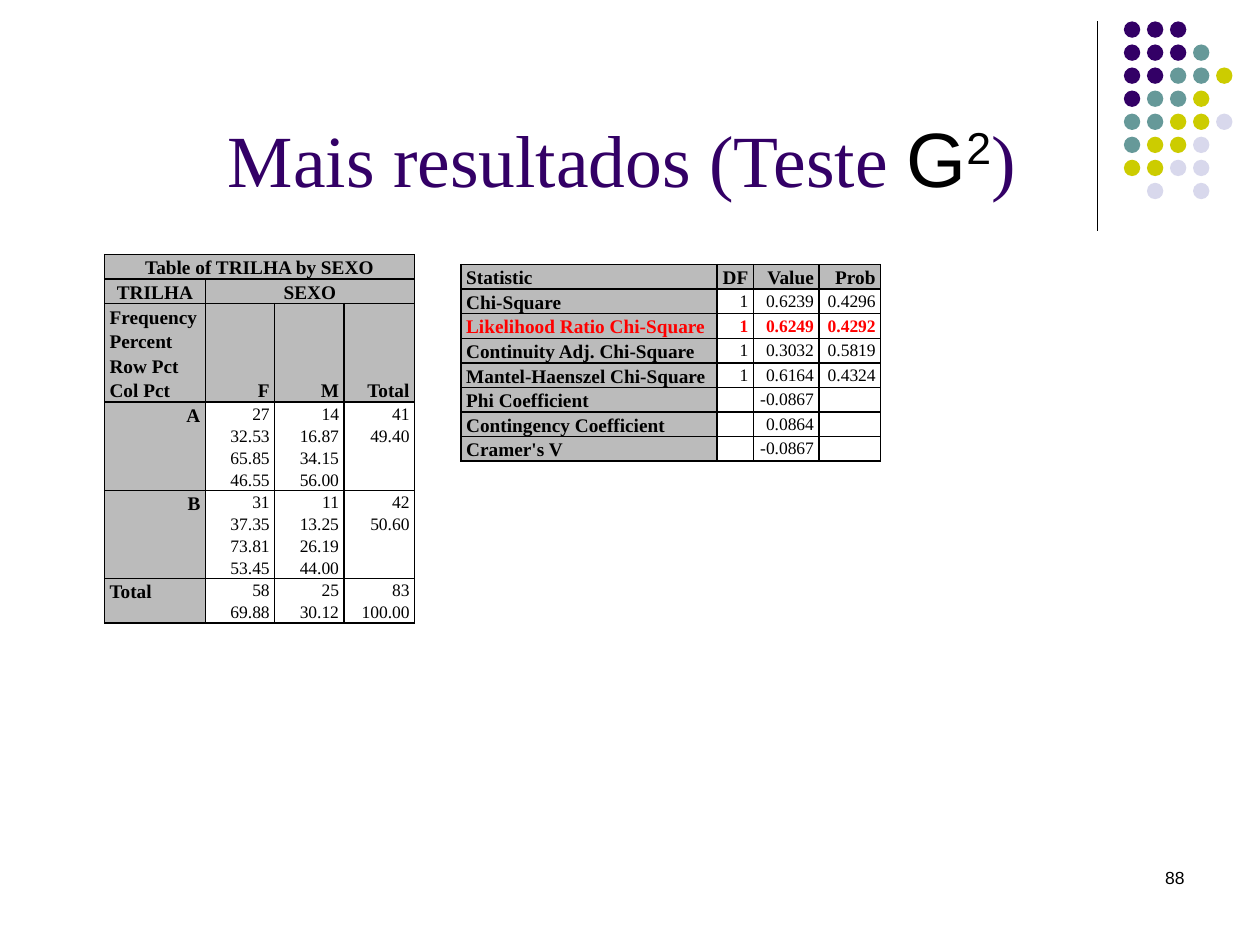
from lxml import etree
from pptx import Presentation
from pptx import util as u
from pptx.dml import color
from pptx.enum import shapes, text
from pptx.oxml import ns

COLORS = {"purple": "330066", "teal": "669999", "olive": "CCCC00", "lilac": "D8D8EC",
          "black": "000000", "white": "FFFFFF", "gray": "BBBBBB", "red": "FF0000"}
SERIF, SANS = "Times New Roman", "Arial"
ALIGN = {"l": text.PP_ALIGN.LEFT, "c": text.PP_ALIGN.CENTER, "r": text.PP_ALIGN.RIGHT}
LINE_PITCH = {11: 14, 10: 12.6}
HEADER_ROW = 0.195

DOT_COLORS = {"p": "purple", "t": "teal", "o": "olive", "l": "lilac"}
DOT_ROWS = ["ppp..", "pppt.", "pptto", "ptto.", "ttool", "tool.", "ooll.", ".l.l."]
DOT_PITCH = 0.183

# Each cell is (text, look, alignment); lines of a cell are split by "\n".
CROSS_TABLE = [
    [("Table of TRILHA by SEXO", "head", "c")],
    [("TRILHA", "head", "c"), ("SEXO", "head", "c")],
    [("Frequency\nPercent\nRow Pct\nCol Pct", "head", "l"),
     ("F", "head", "r"), ("M", "head", "r"), ("Total", "head", "r")],
    [("A", "label", "r"), ("27\n32.53\n65.85\n46.55", "data", "r"),
     ("14\n16.87\n34.15\n56.00", "data", "r"), ("41\n49.40", "data", "r")],
    [("B", "label", "r"), ("31\n37.35\n73.81\n53.45", "data", "r"),
     ("11\n13.25\n26.19\n44.00", "data", "r"), ("42\n50.60", "data", "r")],
    [("Total", "label", "l"), ("58\n69.88", "data", "r"),
     ("25\n30.12", "data", "r"), ("83\n100.00", "data", "r")],
]
STATISTICS = [
    ("Chi-Square", "1", "0.6239", "0.4296"),
    ("Likelihood Ratio Chi-Square", "1", "0.6249", "0.4292"),
    ("Continuity Adj. Chi-Square", "1", "0.3032", "0.5819"),
    ("Mantel-Haenszel Chi-Square", "1", "0.6164", "0.4324"),
    ("Phi Coefficient", "", "-0.0867", ""),
    ("Contingency Coefficient", "", "0.0864", ""),
    ("Cramer's V", "", "-0.0867", ""),
]


def rgb(name):
    return color.RGBColor.from_string(COLORS[name])


class SlideBuilder:
    def __init__(self, slide):
        self.slide = slide

    def line(self, x1, y1, x2, y2):
        rule = self.slide.shapes.add_connector(
            shapes.MSO_CONNECTOR.STRAIGHT, *map(u.Inches, (x1, y1, x2, y2)))
        rule.line.color.rgb = rgb("black")
        rule.line.width = u.Pt(0.75)
        etree.SubElement(rule._element.spPr, ns.qn("a:effectLst"))

    def dot(self, left, top, fill):
        dot = self.slide.shapes.add_shape(
            shapes.MSO_SHAPE.OVAL, *map(u.Inches, (left, top, 0.13, 0.13)))
        dot.shadow.inherit = False
        dot.fill.solid()
        dot.fill.fore_color.rgb = rgb(fill)
        dot.line.fill.background()

    def span(self, para, words, size, font, ink="black", bold=False, raised=False):
        span = para.add_run()
        span.text = words
        span.font.size = u.Pt(size)
        span.font.name = font
        span.font.bold = bold
        span.font.color.rgb = rgb(ink)
        if raised:
            span._r.get_or_add_rPr().set("baseline", "30000")

    def text(self, at, align, anchor, spans):
        box = self.slide.shapes.add_textbox(*map(u.Inches, at))
        box.text_frame.word_wrap = True
        box.text_frame.vertical_anchor = anchor
        para = box.text_frame.paragraphs[0]
        para.alignment = ALIGN[align]
        for span in spans:
            self.span(para, *span)

    def borders(self, cell):
        props = cell._tc.get_or_add_tcPr()
        for place, side in enumerate(("lnL", "lnR", "lnT", "lnB")):
            edge = etree.Element(ns.qn("a:" + side), w=str(u.Pt(1)))
            fill = etree.SubElement(edge, ns.qn("a:solidFill"))
            etree.SubElement(fill, ns.qn("a:srgbClr"), val=COLORS["black"])
            props.insert(place, edge)

    def cell(self, cell, words="", look="head", align="l", ink="black", bold=None):
        data = look == "data"
        size = 10 if data else 11
        cell.margin_left = cell.margin_right = u.Inches(0.04)
        cell.margin_top = cell.margin_bottom = 0
        cell.vertical_anchor = text.MSO_ANCHOR.BOTTOM if look == "head" else text.MSO_ANCHOR.TOP
        cell.fill.solid()
        cell.fill.fore_color.rgb = rgb("white" if data else "gray")
        self.borders(cell)
        para = cell.text_frame.paragraphs[0]
        para.alignment = ALIGN[align]
        para.line_spacing = u.Pt(LINE_PITCH[size])
        if not words:
            etree.SubElement(para._p, ns.qn("a:endParaRPr"), sz=str(size * 100))
            return
        for number, line in enumerate(words.split("\n")):
            if number:
                para.add_line_break()
            self.span(para, line, size, SERIF, ink, not data if bold is None else bold)

    def table(self, left, top, widths, heights, rows):
        """Draw rows of cells; the last cell of a short row spans the rest of it."""
        frame = self.slide.shapes.add_table(
            len(rows), len(widths),
            *map(u.Inches, (left, top, sum(widths), sum(heights))))
        table = frame.table
        for column, width in zip(table.columns, widths):
            column.width = u.Inches(width)
        for r, (row, height) in enumerate(zip(rows, heights)):
            table.rows[r].height = u.Inches(height)
            for c in range(len(widths)):
                self.cell(table.cell(r, c), *(row[c] if c < len(row) else ()))
            if len(row) < len(widths):
                table.cell(r, len(row) - 1).merge(table.cell(r, len(widths) - 1))


def statistic_rows():
    yield [("Statistic", "head", "l")] + [(name, "head", "r") for name in ("DF", "Value", "Prob")]
    for name, *values in STATISTICS:
        marked = name.startswith("Likelihood")
        ink, bold = ("red", True) if marked else ("black", None)
        yield [(name, "label", "l", ink)] + [(value, "data", "r", ink, bold) for value in values]


def main():
    deck = Presentation()
    deck.slide_width, deck.slide_height = u.Inches(10), u.Inches(7.5)
    page = SlideBuilder(deck.slides.add_slide(deck.slide_layouts[6]))

    page.line(8.71, 0.17, 8.71, 1.83)
    for r, row in enumerate(DOT_ROWS):
        for c, mark in enumerate(row):
            if mark in DOT_COLORS:
                page.dot(8.92 + c * DOT_PITCH, 0.17 + r * DOT_PITCH, DOT_COLORS[mark])

    page.text((1.02, 0.11, 7.83, 1.55), "c", text.MSO_ANCHOR.BOTTOM, [
        ("Mais resultados (Teste ", 42, SERIF, "purple"),
        ("G", 44, SANS),
        ("2", 44, SANS, "black", False, True),
        (")", 42, SERIF, "purple"),
    ])
    page.table(0.83, 2.02, (0.8, 0.55, 0.55, 0.56),
               (HEADER_ROW, HEADER_ROW, 0.78, 0.7, 0.7, 0.35), CROSS_TABLE)
    rows = list(statistic_rows())
    page.table(3.66, 2.1, (2.03, 0.29, 0.52, 0.49), [HEADER_ROW] * len(rows), rows)
    page.text((7.17, 6.83, 2.33, 0.5), "r", text.MSO_ANCHOR.TOP, [("88", 10, SANS)])

    deck.save("out.pptx")


if __name__ == "__main__":
    main()
